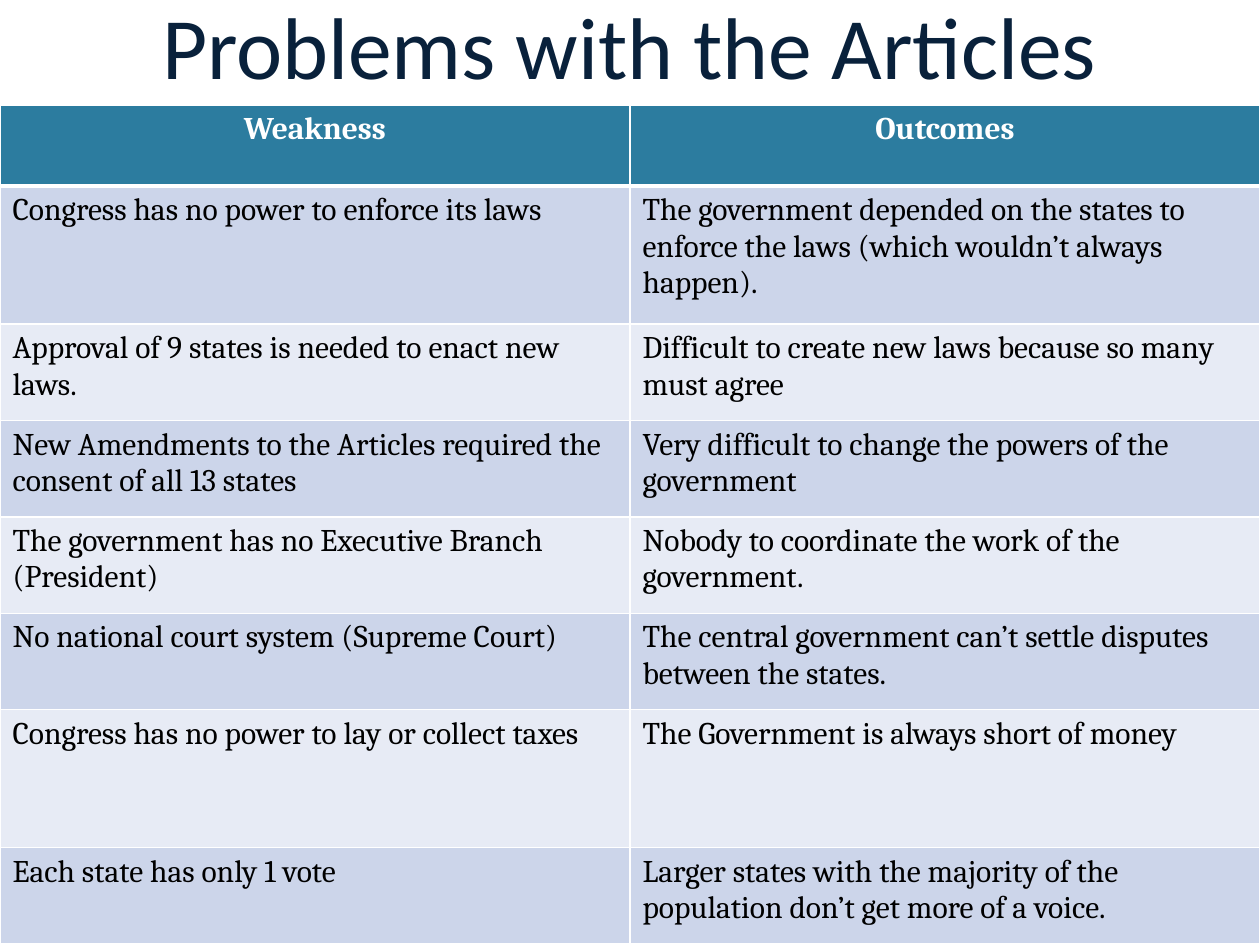
from lxml.etree import SubElement
from pptx import Presentation
from pptx.dml.color import RGBColor
from pptx.enum.text import MSO_ANCHOR as Anchor, PP_ALIGN as Align
from pptx.oxml.ns import qn
from pptx.util import Inches, Pt

WIDTH, HEIGHT = Inches(10), Inches(7.5)
COLORS = {
    "title": "09213B",
    "header": "2C7C9F",
    "odd_row": "CCD5EA",
    "even_row": "E7EBF5",
    "body": "000000",
    "white": "FFFFFF",
}
TABLE_TOP = 11.1
HEADER_ROW, SHORT_ROW, TALL_ROW = 8.6, 10.2, 14.6
ROW_HEIGHTS = [HEADER_ROW, TALL_ROW, *[SHORT_ROW] * 4, TALL_ROW, SHORT_ROW]
ROWS = [
    ("Weakness", "Outcomes"),
    ("Congress has no power to enforce its laws",
     "The government depended on the states to enforce the laws (which wouldn’t always happen)."),
    ("Approval of 9 states is needed to enact new laws.",
     "Difficult to create new laws because so many must agree"),
    ("New Amendments to the Articles required the consent of all 13 states",
     "Very difficult to change the powers of the government"),
    ("The government has no Executive Branch (President)",
     "Nobody to coordinate the work of the government."),
    ("No national court system (Supreme Court)",
     "The central government can’t settle disputes between the states."),
    ("Congress has no power to lay or collect taxes",
     "The Government is always short of money"),
    ("Each state has only 1 vote",
     "Larger states with the majority of the population don’t get more of a voice."),
]


def across(percent):
    return round(WIDTH * percent / 100)


def down(percent):
    return round(HEIGHT * percent / 100)


def color(name):
    return RGBColor.from_string(COLORS[name])


def write_text(frame, text, font="Cambria", size=18, ink="body", bold=False, align=Align.LEFT):
    paragraph = frame.paragraphs[0]
    paragraph.alignment = align
    run = paragraph.add_run()
    run.text = text
    run.font.name = font
    run.font.size = Pt(size)
    run.font.bold = bold
    run.font.color.rgb = color(ink)


def add_title(slide, text):
    shape = slide.shapes.add_textbox(across(5), 0, across(90), down(10.3))
    frame = shape.text_frame
    frame.word_wrap = True
    frame.vertical_anchor = Anchor.BOTTOM
    frame.margin_left = frame.margin_right = frame.margin_bottom = 0
    write_text(frame, text, font="Calibri", size=50, ink="title", align=Align.CENTER)


def set_borders(cell, top, bottom):
    properties = cell._tc.get_or_add_tcPr()
    for side, width in (("L", 1), ("R", 1), ("T", top), ("B", bottom)):
        line = SubElement(properties, qn(f"a:ln{side}"), w=str(Pt(width)))
        fill = SubElement(line, qn("a:solidFill"))
        SubElement(fill, qn("a:srgbClr"), val=COLORS["white"])


def format_cell(cell, text, row):
    set_borders(cell, top=3 if row == 1 else 1, bottom=3 if row == 0 else 1)
    cell.fill.solid()
    if row == 0:
        cell.fill.fore_color.rgb = color("header")
        write_text(cell.text_frame, text, ink="white", bold=True, align=Align.CENTER)
    else:
        cell.fill.fore_color.rgb = color("odd_row" if row % 2 else "even_row")
        write_text(cell.text_frame, text)


def add_problem_table(slide):
    table = slide.shapes.add_table(
        len(ROWS), 2, 0, down(TABLE_TOP), WIDTH, down(sum(ROW_HEIGHTS))
    ).table
    for column in table.columns:
        column.width = across(50)
    for row, (texts, height) in enumerate(zip(ROWS, ROW_HEIGHTS)):
        table.rows[row].height = down(height)
        for column, text in enumerate(texts):
            format_cell(table.cell(row, column), text, row)


def main():
    presentation = Presentation()
    presentation.slide_width, presentation.slide_height = WIDTH, HEIGHT
    slide = presentation.slides.add_slide(presentation.slide_layouts[6])
    add_title(slide, "Problems with the Articles")
    add_problem_table(slide)
    presentation.save("out.pptx")


if __name__ == "__main__":
    main()
